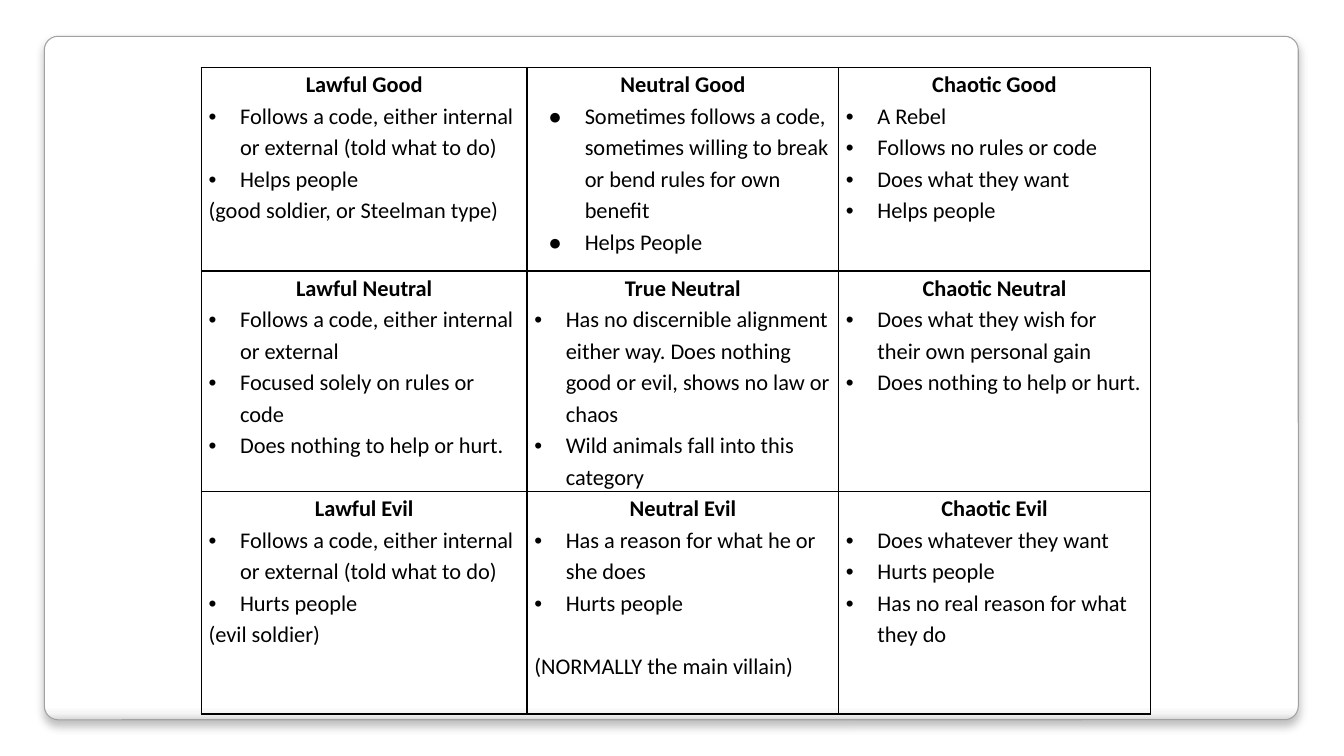
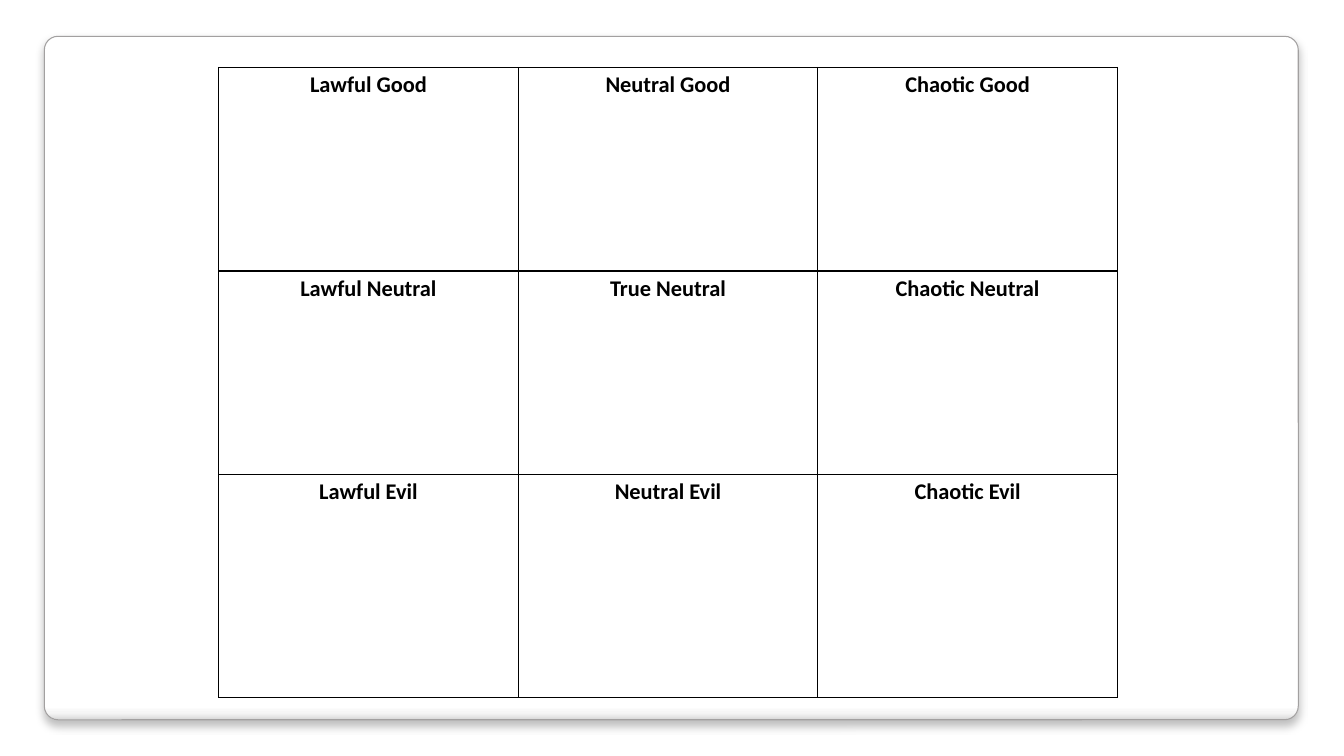
from dataclasses import dataclass

import pptx
import pptx.dml.color
import pptx.enum.shapes
import pptx.enum.text
import pptx.oxml
import pptx.oxml.ns
import pptx.util
from pptx.util import Pt

NAMESPACE = pptx.oxml.ns.nsdecls("a")


@dataclass(frozen=True)
class Theme:
    text: str = "000000"
    card_line: str = "A2A0A0"
    card_stops: tuple[tuple[int, str], ...] = (
        (0, "FFFFFF"), (98, "FFFFFF"), (99, "F6F6F6"), (100, "D8D8D8"))
    font: str = "Calibri"
    size: float = 16
    line_spacing: float = 1.15
    cell_inset: float = 5.2
    blank_line: float = 22.4


@dataclass(frozen=True)
class Bullet:
    symbol: str
    indent: float
    hanging: float


THEME = Theme()
DOT = Bullet("•", 22.5, 22.5)
LARGE_DOT = Bullet("●", 36, 25.9)


@dataclass(frozen=True)
class Alignment:
    title: str
    traits: tuple[str, ...]
    bullet: Bullet = DOT
    example: str = ""
    example_gap: float = 0


@dataclass(frozen=True)
class GridLayout:
    left: float
    columns: tuple[float, ...]
    detailed: bool
    top: float = 48.2
    rows: tuple[float, ...] = (145.4, 145.4, 159.1)


ALIGNMENTS = (
    (
        Alignment("Lawful Good",
                  ("Follows a code, either internal or external (told what to do)",
                   "Helps people"),
                  example="(good soldier, or Steelman type)"),
        Alignment("Neutral Good",
                  ("Sometimes follows a code, sometimes willing to break "
                   "or bend rules for own benefit",
                   "Helps People"),
                  bullet=LARGE_DOT),
        Alignment("Chaotic Good",
                  ("A Rebel", "Follows no rules or code",
                   "Does what they want", "Helps people")),
    ),
    (
        Alignment("Lawful Neutral",
                  ("Follows a code, either internal or external",
                   "Focused solely on rules or code",
                   "Does nothing to help or hurt.")),
        Alignment("True Neutral",
                  ("Has no discernible alignment either way. Does nothing "
                   "good or evil, shows no law or chaos",
                   "Wild animals fall into this category")),
        Alignment("Chaotic Neutral",
                  ("Does what they wish for their own personal gain",
                   "Does nothing to help or hurt.")),
    ),
    (
        Alignment("Lawful Evil",
                  ("Follows a code, either internal or external (told what to do)",
                   "Hurts people"),
                  example="(evil soldier)"),
        Alignment("Neutral Evil",
                  ("Has a reason for what he or she does", "Hurts people"),
                  example="(NORMALLY the main villain)",
                  example_gap=THEME.blank_line),
        Alignment("Chaotic Evil",
                  ("Does whatever they want", "Hurts people",
                   "Has no real reason for what they do")),
    ),
)

GRIDS = (
    GridLayout(left=143.8, columns=(232.7, 222.6, 222.6), detailed=True),
    GridLayout(left=156.2, columns=(214, 214, 214), detailed=False),
)


def color(value: str) -> pptx.dml.color.RGBColor:
    return pptx.dml.color.RGBColor.from_string(value)


def draw_card(slide: pptx.slide.Slide) -> None:
    shape = slide.shapes.add_shape(
        pptx.enum.shapes.MSO_SHAPE.ROUNDED_RECTANGLE,
        Pt(31.7), Pt(25.9), Pt(895.7), Pt(488.2))
    shape.adjustments[0] = 0.02
    shape.line.color.rgb = color(THEME.card_line)
    shape.line.width = Pt(0.75)
    shape.shadow.inherit = False

    properties = shape._element.spPr
    stops = "".join(
        f'<a:gs pos="{position * 1000}"><a:srgbClr val="{value}"/></a:gs>'
        for position, value in THEME.card_stops)
    gradient = pptx.oxml.parse_xml(
        f'<a:gradFill {NAMESPACE} rotWithShape="1"><a:gsLst>{stops}</a:gsLst>'
        '<a:lin ang="5400000" scaled="0"/></a:gradFill>')
    properties.find(pptx.oxml.ns.qn("a:ln")).addprevious(gradient)
    shadow = pptx.oxml.parse_xml(
        f'<a:outerShdw {NAMESPACE} blurRad="{Pt(6)}" dist="{Pt(4)}" dir="5400000" '
        f'rotWithShape="0"><a:srgbClr val="{THEME.text}"><a:alpha val="25000"/>'
        '</a:srgbClr></a:outerShdw>')
    properties.find(pptx.oxml.ns.qn("a:effectLst")).append(shadow)


def set_bullet(paragraph: pptx.text.text._Paragraph, bullet: Bullet) -> None:
    properties = paragraph._p.get_or_add_pPr()
    properties.set("marL", str(Pt(bullet.indent)))
    properties.set("indent", str(-Pt(bullet.hanging)))
    for markup in (
        f'<a:buClr {NAMESPACE}><a:srgbClr val="{THEME.text}"/></a:buClr>',
        f'<a:buFont {NAMESPACE} typeface="Arial"/>',
        f'<a:buChar {NAMESPACE} char="{bullet.symbol}"/>',
    ):
        properties.append(pptx.oxml.parse_xml(markup))


def write_paragraph(paragraph: pptx.text.text._Paragraph, text: str,
                    bullet: Bullet | None = None, bold: bool = False) -> None:
    if bullet:
        set_bullet(paragraph, bullet)
    paragraph.text = text
    paragraph.line_spacing = THEME.line_spacing
    paragraph.font.name = THEME.font
    paragraph.font.size = Pt(THEME.size)
    paragraph.font.bold = bold
    paragraph.font.color.rgb = color(THEME.text)


def style_cell(cell: pptx.table._Cell) -> None:
    cell.margin_left = cell.margin_right = Pt(THEME.cell_inset)
    cell.margin_top = cell.margin_bottom = 0
    properties = cell._tc.get_or_add_tcPr()
    for side in "LRTB":
        properties.append(pptx.oxml.parse_xml(
            f'<a:ln{side} {NAMESPACE} w="{Pt(1)}"><a:solidFill>'
            f'<a:srgbClr val="{THEME.text}"/></a:solidFill></a:ln{side}>'))
    cell.fill.background()


def fill_cell(cell: pptx.table._Cell, alignment: Alignment, detailed: bool) -> None:
    style_cell(cell)
    frame = cell.text_frame
    heading = frame.paragraphs[0]
    write_paragraph(heading, alignment.title, bold=True)
    heading.alignment = pptx.enum.text.PP_ALIGN.CENTER
    if not detailed:
        return
    for trait in alignment.traits:
        write_paragraph(frame.add_paragraph(), trait, alignment.bullet)
    if alignment.example:
        example = frame.add_paragraph()
        write_paragraph(example, alignment.example)
        if alignment.example_gap:
            example.space_before = Pt(alignment.example_gap)


def draw_grid(slide: pptx.slide.Slide, grid: GridLayout) -> None:
    table = slide.shapes.add_table(
        len(grid.rows), len(grid.columns), Pt(grid.left), Pt(grid.top),
        Pt(sum(grid.columns)), Pt(sum(grid.rows))).table
    table.first_row = table.horz_banding = False
    for column, width in zip(table.columns, grid.columns):
        column.width = Pt(width)
    for row, height, alignments in zip(table.rows, grid.rows, ALIGNMENTS):
        row.height = Pt(height)
        for cell, alignment in zip(row.cells, alignments):
            fill_cell(cell, alignment, grid.detailed)


def main() -> None:
    presentation = pptx.Presentation()
    presentation.slide_width = Pt(960)
    presentation.slide_height = Pt(540)
    blank_layout = presentation.slide_layouts[6]
    for grid in GRIDS:
        slide = presentation.slides.add_slide(blank_layout)
        draw_card(slide)
        draw_grid(slide, grid)
    presentation.save("out.pptx")


if __name__ == "__main__":
    main()
